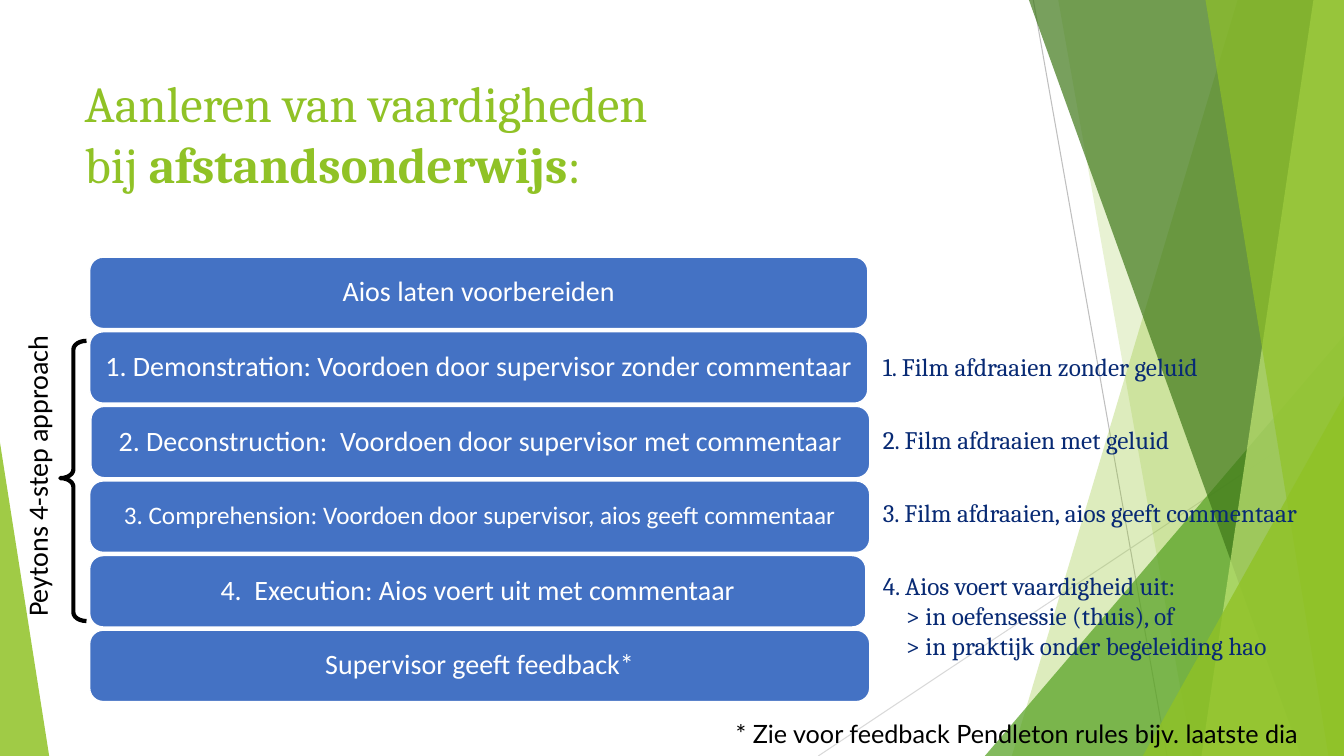
from dataclasses import dataclass

from lxml.etree import SubElement
from pptx import Presentation
from pptx.dml.color import RGBColor
from pptx.enum.shapes import MSO_CONNECTOR, MSO_SHAPE
from pptx.enum.text import MSO_ANCHOR, MSO_AUTO_SIZE, PP_ALIGN
from pptx.oxml.ns import qn
from pptx.util import Cm, Pt

WIDTH, HEIGHT = 33.87, 19.05


@dataclass(frozen=True)
class Theme:
    lime: str = "90C226"
    green: str = "54A021"
    forest: str = "3F7819"
    pale_lime: str = "C0E474"
    blue: str = "4472C4"
    navy: str = "082A74"
    black: str = "000000"
    white: str = "FFFFFF"
    grey: str = "BFBFBF"
    light_grey: str = "D9D9D9"
    serif: str = "Cambria"
    sans: str = "Calibri"
    footnote: str = "Lato"
    title_size: int = 36
    step_size: int = 20
    note_size: int = 18


class SkillSlide:
    def __init__(self, deck, theme):
        self.theme = theme
        self.slide = deck.slides.add_slide(deck.slide_layouts[5])
        self.shapes = self.slide.shapes

    def style(self, paragraph, font, size, color):
        paragraph.font.name = font
        paragraph.font.size = Pt(size)
        paragraph.font.color.rgb = RGBColor.from_string(color)

    def title(self, box, opening, emphasis, closing):
        heading = self.shapes.title
        heading.left, heading.top, heading.width, heading.height = map(Cm, box)
        frame = heading.text_frame
        frame.auto_size = MSO_AUTO_SIZE.NONE
        frame.vertical_anchor = MSO_ANCHOR.TOP
        paragraph = frame.paragraphs[0]
        paragraph.text = opening
        strong = paragraph.add_run()
        strong.text = emphasis
        strong.font.bold = True
        paragraph.add_run().text = closing
        paragraph.alignment = PP_ALIGN.LEFT
        self.style(paragraph, self.theme.serif, self.theme.title_size, self.theme.lime)

    def hairline(self, start, end, color):
        line = self.shapes.add_connector(MSO_CONNECTOR.STRAIGHT, *map(Cm, start + end))
        line.line.color.rgb = RGBColor.from_string(color)
        line.line.width = Pt(0.75)
        SubElement(line._element.spPr, qn("a:effectLst"))

    def facet(self, points, color, opacity):
        corners = [(Cm(x), Cm(y)) for x, y in points]
        builder = self.shapes.build_freeform(*corners[0])
        builder.add_line_segments(corners[1:], close=True)
        facet = builder.convert_to_shape()
        facet.shadow.inherit = False
        facet.line.fill.background()
        facet.fill.solid()
        facet.fill.fore_color.rgb = RGBColor.from_string(color)
        tint = facet._element.spPr.find(".//" + qn("a:srgbClr"))
        SubElement(tint, qn("a:alpha"), val=str(opacity * 1000))

    def step(self, box, text, size):
        bar = self.shapes.add_shape(MSO_SHAPE.ROUNDED_RECTANGLE, *map(Cm, box))
        bar.adjustments[0] = 0.19
        bar.shadow.inherit = False
        bar.fill.solid()
        bar.fill.fore_color.rgb = RGBColor.from_string(self.theme.blue)
        bar.line.color.rgb = RGBColor.from_string(self.theme.white)
        bar.line.width = Pt(1)
        frame = bar.text_frame
        frame.word_wrap = True
        frame.vertical_anchor = MSO_ANCHOR.MIDDLE
        frame.margin_left = frame.margin_right = Cm(0.2)
        paragraph = frame.paragraphs[0]
        paragraph.text = text
        paragraph.alignment = PP_ALIGN.CENTER
        paragraph.line_spacing = 0.9
        self.style(paragraph, self.theme.sans, size, self.theme.white)

    def brace(self, box):
        brace = self.shapes.add_shape(MSO_SHAPE.LEFT_BRACE, *map(Cm, box))
        brace.adjustments[0] = 0.33
        brace.adjustments[1] = 0.49
        brace.shadow.inherit = False
        brace.fill.background()
        brace.line.color.rgb = RGBColor.from_string(self.theme.black)
        brace.line.width = Pt(3)

    def text(self, box, lines, font, size, color, rotation=0):
        label = self.shapes.add_textbox(*map(Cm, box))
        label.rotation = rotation
        frame = label.text_frame
        frame.word_wrap = True
        frame.text = "\n".join(lines)
        for index, paragraph in enumerate(frame.paragraphs):
            self.style(paragraph, font, size, color)
            if index:
                paragraph._p.get_or_add_pPr().set("marL", str(Cm(0.58)))


def main():
    deck = Presentation()
    deck.slide_width, deck.slide_height = Cm(WIDTH), Cm(HEIGHT)
    theme = Theme()
    page = SkillSlide(deck, theme)

    page.hairline((26.04, 0), (29.41, HEIGHT), theme.grey)
    page.hairline((WIDTH, 10.24), (20.62, HEIGHT), theme.light_grey)
    right_edge = [(WIDTH, 0), (WIDTH, HEIGHT)]
    for top_x, bottom_x, color, opacity in (
        (31.19, 25.5, theme.lime, 30),
        (26.67, 30.05, theme.lime, 20),
    ):
        page.facet([(top_x, 0), *right_edge, (bottom_x, HEIGHT)], color, opacity)
    page.facet([(24.82, HEIGHT), (WIDTH, 8.46), (WIDTH, HEIGHT)], theme.green, 72)
    for top_x, bottom_x, color, opacity in (
        (25.93, 32.79, theme.forest, 70),
        (33.1, 30.28, theme.pale_lime, 70),
        (30.38, 33.48, theme.lime, 65),
    ):
        page.facet([(top_x, 0), *right_edge, (bottom_x, HEIGHT)], color, opacity)
    page.facet([(28.8, HEIGHT), (WIDTH, 9.98), (WIDTH, HEIGHT)], theme.lime, 80)
    page.facet([(0, HEIGHT), (0, 11.15), (1.24, HEIGHT)], theme.lime, 85)

    page.title((1.88, 1.7, 23.88, 3.66),
               "Aanleren van vaardigheden\vbij ", "afstandsonderwijs", ":")

    steps = (
        (2.26, 19.61, "Aios laten voorbereiden", theme.step_size),
        (2.26, 19.61, "1. Demonstration: Voordoen door supervisor zonder commentaar",
         theme.step_size),
        (2.29, 19.63, "2. Deconstruction:  Voordoen door supervisor met commentaar",
         theme.step_size),
        (2.26, 19.66, "3. Comprehension: Voordoen door supervisor, aios geeft commentaar",
         theme.note_size),
        (2.26, 19.56, "4.  Execution: Aios voert uit met commentaar", theme.step_size),
        (2.26, 19.66, "Supervisor geeft feedback*", theme.step_size),
    )
    for row, (left, width, wording, size) in enumerate(steps):
        page.step((left, 6.48 + 1.88 * row, width, 1.8), wording, size)

    page.brace((1.52, 8.59, 0.66, 7.06))
    page.text((-3, 11.3, 7.87, 1.12), ["Peytons 4-step approach"],
              theme.sans, theme.step_size, theme.black, rotation=270)

    film_notes = (
        ["1. Film afdraaien zonder geluid"],
        ["2. Film afdraaien met geluid"],
        ["3. Film afdraaien, aios geeft commentaar"],
        ["4. Aios voert vaardigheid uit:", "> in oefensessie (thuis), of",
         "> in praktijk onder begeleiding hao"],
    )
    for row, lines in enumerate(film_notes):
        page.text((22, 8.72 + 1.84 * row, 11.8, 1.02 + 0.77 * (len(lines) - 1)), lines,
                  theme.serif, theme.note_size, theme.navy)

    page.text((18.29, 17.98, 15.57, 1.02),
              ["* Zie voor feedback Pendleton rules bijv. laatste dia"],
              theme.footnote, theme.note_size, theme.black)
    deck.save("out.pptx")


if __name__ == "__main__":
    main()
